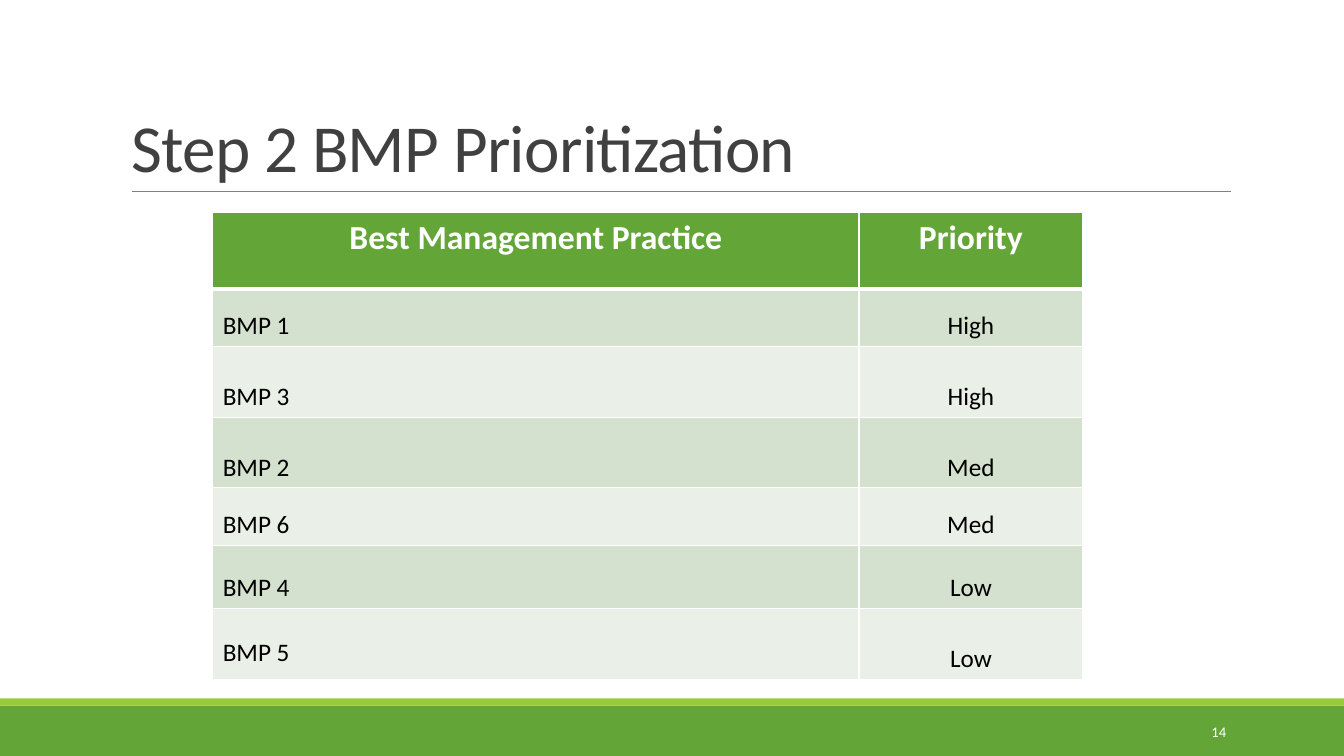
from pptx import Presentation
from pptx.dml.color import RGBColor
from pptx.enum import shapes, text
from pptx.oxml import parse_xml
from pptx.oxml.ns import nsdecls
from pptx.util import Inches, Pt

FONT = "Calibri"
COLORS = {
    "green": "63A537",
    "lime": "99CB38",
    "rule": "808080",
    "title": "404040",
    "white": "FFFFFF",
    "black": "000000",
    "band_dark": "D3E1CE",
    "band_light": "EAF0E8",
}
HEADINGS = ("Best Management Practice", "Priority")
PRACTICES = [
    ("BMP 1", "High"),
    ("BMP 3", "High"),
    ("BMP 2", "Med"),
    ("BMP 6", "Med"),
    ("BMP 4", "Low"),
    ("BMP 5", "Low"),
]
COLUMN_WIDTHS = (6.41, 2.22)
ROW_HEIGHTS = (0.76, 0.57, 0.7, 0.7, 0.57, 0.63, 0.7)


def color(name):
    return RGBColor.from_string(COLORS[name])


def add_run(paragraph, content, size, color_name, bold=False):
    run = paragraph.add_run()
    run.text = content
    run.font.name = FONT
    run.font.size = Pt(size)
    run.font.bold = bold
    run.font.color.rgb = color(color_name)
    return run


def add_band(slide, top, height, color_name):
    """Add a full-width footer band."""
    band = slide.shapes.add_shape(
        shapes.MSO_SHAPE.RECTANGLE, 0, Inches(top), Inches(13.33), Inches(height))
    band.shadow.inherit = False
    band.fill.solid()
    band.fill.fore_color.rgb = color(color_name)
    band.line.fill.background()


def add_rule(slide, left, right, top):
    rule = slide.shapes.add_connector(
        shapes.MSO_CONNECTOR.STRAIGHT,
        Inches(left), Inches(top), Inches(right), Inches(top))
    rule.line.color.rgb = color("rule")
    rule.line.width = Pt(0.5)
    rule._element.spPr.append(parse_xml(f"<a:effectLst {nsdecls('a')}/>"))


def set_title(slide, content):
    title = slide.shapes.title
    title.left, title.top = Inches(1.2), Inches(0.31)
    title.width, title.height = Inches(11), Inches(1.59)
    frame = title.text_frame
    frame.vertical_anchor = text.MSO_ANCHOR.BOTTOM
    frame.auto_size = text.MSO_AUTO_SIZE.NONE
    paragraph = frame.paragraphs[0]
    paragraph.alignment = text.PP_ALIGN.LEFT
    paragraph.line_spacing = 0.85
    run = add_run(paragraph, content, 48, "title")
    run.font._element.set("spc", "-50")


def set_borders(cell, bottom_width):
    """Draw white cell borders; the fill must be set afterwards."""
    properties = cell._tc.get_or_add_tcPr()
    for side, width in (("L", 1), ("R", 1), ("T", 1), ("B", bottom_width)):
        properties.append(parse_xml(
            f'<a:ln{side} {nsdecls("a")} w="{Pt(width)}"><a:solidFill>'
            f'<a:srgbClr val="{COLORS["white"]}"/></a:solidFill></a:ln{side}>'))


def fill_cell(cell, content, is_header, centered, fill_name):
    set_borders(cell, 3 if is_header else 1)
    cell.fill.solid()
    cell.fill.fore_color.rgb = color(fill_name)
    anchors = text.MSO_ANCHOR
    cell.vertical_anchor = anchors.TOP if is_header else anchors.BOTTOM
    paragraph = cell.text_frame.paragraphs[0]
    paragraph.alignment = text.PP_ALIGN.CENTER if centered else text.PP_ALIGN.LEFT
    if is_header:
        add_run(paragraph, content, 24, "white", bold=True)
    else:
        add_run(paragraph, content, 18, "black")


def add_priority_table(slide):
    rows = [HEADINGS, *PRACTICES]
    table = slide.shapes.add_table(
        len(rows), len(HEADINGS), Inches(2.11), Inches(2.11),
        Inches(sum(COLUMN_WIDTHS)), Inches(sum(ROW_HEIGHTS))).table
    for column, width in zip(table.columns, COLUMN_WIDTHS):
        column.width = Inches(width)
    for row_index, (row, height) in enumerate(zip(rows, ROW_HEIGHTS)):
        table.rows[row_index].height = Inches(height)
        is_header = row_index == 0
        band = "band_dark" if row_index % 2 else "band_light"
        for column_index, content in enumerate(row):
            fill_cell(table.cell(row_index, column_index), content, is_header,
                      is_header or column_index == 1,
                      "green" if is_header else band)
    last_practice = table.cell(len(PRACTICES), 0)
    last_practice.vertical_anchor = text.MSO_ANCHOR.TOP
    last_practice.margin_top = Inches(0.29)


def add_slide_number(slide, number):
    box = slide.shapes.add_textbox(
        Inches(10.83), Inches(7.06), Inches(1.43), Inches(0.4))
    frame = box.text_frame
    frame.word_wrap = True
    frame.vertical_anchor = text.MSO_ANCHOR.MIDDLE
    paragraph = frame.paragraphs[0]
    paragraph.alignment = text.PP_ALIGN.RIGHT
    add_run(paragraph, number, 10.5, "white")


def main():
    presentation = Presentation()
    presentation.slide_width = Inches(13.33)
    presentation.slide_height = Inches(7.5)
    slide = presentation.slides.add_slide(presentation.slide_layouts[5])
    add_band(slide, 7, 0.5, "green")
    add_band(slide, 6.93, 0.07, "lime")
    add_rule(slide, 1.31, 12.21, 1.9)
    set_title(slide, "Step 2 BMP Prioritization")
    add_priority_table(slide)
    add_slide_number(slide, "14")
    presentation.save("out.pptx")


if __name__ == "__main__":
    main()
